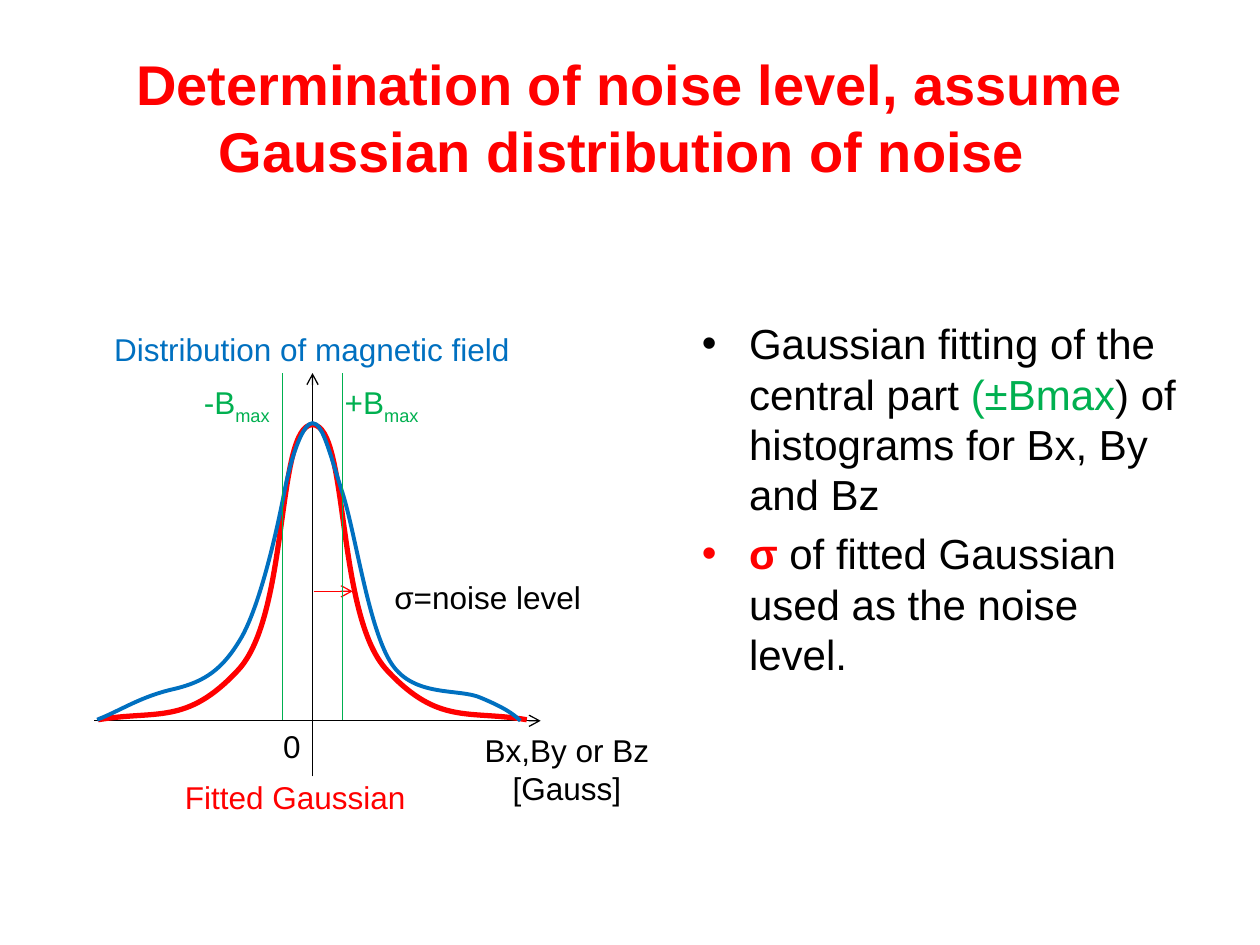
from lxml import etree
from pptx import Presentation
from pptx import util as u
from pptx.dml.color import RGBColor
from pptx.enum import shapes, text
from pptx.oxml import ns

BLACK, RED, BLUE, GREEN = "000000", "FF0000", "0070C0", "00B050"
CENTER = text.PP_ALIGN.CENTER


def color(hex_code):
    return RGBColor.from_string(hex_code)


def add_xml(parent, tag, **attrs):
    return etree.SubElement(parent, ns.qn(tag), attrs)


class SlideBuilder:
    """Places elements on one slide; all positions are in centimetres."""
    font = "Arial"
    thin = 0.75

    def __init__(self, s):
        self.s = s

    def text(self, box, paragraphs, size=18, align=None, wrap=False, anchor=None):
        """Each paragraph is a list of (text, colour, font options) runs."""
        sp = self.s.shapes.add_textbox(*map(u.Cm, box))
        tf = sp.text_frame
        tf.word_wrap = wrap
        tf.vertical_anchor = anchor
        for i, runs in enumerate(paragraphs):
            p = tf.add_paragraph() if i else tf.paragraphs[0]
            p.alignment = align
            p.font.name, p.font.size = self.font, u.Pt(size)
            for words, hex_code, *options in runs:
                r = p.add_run()
                r.text = words
                r.font.name, r.font.size = self.font, u.Pt(size)
                r.font.color.rgb = color(hex_code)
                if "bold" in options:
                    r.font.bold = True
                if "sub" in options:
                    r.font._element.set("baseline", "-25000")
        return tf

    def bullets(self, box, paragraphs, size):
        tf = self.text(box, paragraphs, size, wrap=True)
        for p in tf.paragraphs:
            p.space_before = u.Pt(size * 0.2)
            pPr = p._p.get_or_add_pPr()
            indent = u.Cm(0.95)
            pPr.set("marL", str(indent))
            pPr.set("indent", str(-indent))
            bullet_font = etree.Element(ns.qn("a:buFont"), typeface=self.font)
            bullet = etree.Element(ns.qn("a:buChar"), char="•")
            pPr.find(ns.qn("a:spcBef")).addnext(bullet_font)
            bullet_font.addnext(bullet)

    def line(self, x1, y1, x2, y2, hex_code, arrow=False):
        c = self.s.shapes.add_connector(shapes.MSO_CONNECTOR.STRAIGHT,
                                        *map(u.Cm, (x1, y1, x2, y2)))
        c.line.color.rgb = color(hex_code)
        c.line.width = u.Pt(self.thin)
        if arrow:
            add_xml(c.line._get_or_add_ln(), "a:tailEnd", type="arrow")
        add_xml(c._element.spPr, "a:effectLst")

    def curve(self, points, hex_code, width):
        """Joined cubic curves: a start, then two controls and an end for each."""
        points = [(u.Cm(x), u.Cm(y)) for x, y in points]
        start, *ends = points[::3]
        builder = self.s.shapes.build_freeform(*start)
        builder.add_line_segments(ends, close=False)
        sp = builder.convert_to_shape()
        # Turn each straight segment into a cubic curve
        segments = list(sp._element.iter(ns.qn("a:lnTo")))
        for i, segment in enumerate(segments):
            cubic = etree.Element(ns.qn("a:cubicBezTo"))
            for x, y in points[3 * i + 1:3 * i + 4]:
                add_xml(cubic, "a:pt", x=str(x - sp.left), y=str(y - sp.top))
            segment.getparent().replace(segment, cubic)
        sp.shadow.inherit = False
        sp.fill.background()
        sp.line.color.rgb = color(hex_code)
        sp.line.width = u.Pt(width)


def main():
    prs = Presentation()
    prs.slide_width, prs.slide_height = u.Cm(25.4), u.Cm(19.05)
    b = SlideBuilder(prs.slides.add_slide(prs.slide_layouts[6]))

    # Title and explanation
    b.text((1.27, 0.76, 22.86, 3.18),
           [[("Determination of noise level, assume Gaussian distribution of noise ", RED, "bold")]],
           size=32, align=CENTER, wrap=True, anchor=text.MSO_ANCHOR.MIDDLE)
    b.bullets((13.9, 6.28, 10.24, 12.57), [
        [("Gaussian fitting of the central part ", BLACK), ("(±Bmax", GREEN),
         (") of histograms for Bx, By and Bz", BLACK)],
        [("σ ", RED, "bold"), ("of fitted Gaussian used as the noise level.", BLACK)],
    ], size=24)

    # Horizontal axis
    center, top, base = 6.3, 7.52, 14.53
    b.line(1.9, base, 10.9, base, BLACK, arrow=True)
    b.text((9.5, 14.61, 3.86, 1.8), [[("Bx,By or Bz", BLACK)], [("[Gauss]", BLACK)]],
           align=CENTER)

    # Vertical axis
    b.line(center, 15.65, center, top, BLACK, arrow=True)
    for words, hex_code, x, y, width in (
            ("Distribution of magnetic field", BLUE, 2.05, 6.53, 8.74),
            ("0", BLACK, 5.46, 14.53, 0.86)):
        b.text((x, y, width, 1.02), [[(words, hex_code)]])

    # Fitted Gaussian: left half and its mirror
    left = [(1.98, 14.51), (3.15, 14.31), (3.76, 14.63), (4.8, 13.51),
            (5.84, 12.4), (5.56, 8.59), (center, 8.56)]
    for half in (left, [(2 * center - x, y) for x, y in left]):
        b.curve(half, RED, 3)

    # Measured distribution
    b.curve([(1.96, 14.51), (2.46, 14.31), (2.84, 14.04), (3.51, 13.89),
             (4.14, 13.74), (4.5, 13.49), (4.88, 12.83),
             (5.26, 12.14), (5.59, 10.67), (5.74, 9.88),
             (5.89, 9.12), (6.12, 8.53), (center, 8.53),
             (6.5, 8.53), (6.63, 9.07), (6.88, 9.86),
             (7.16, 10.67), (7.42, 12.67), (7.9, 13.39),
             (8.36, 14.07), (9.27, 13.87), (9.7, 14.07),
             (10.13, 14.25), (10.34, 14.38), (10.49, base)], BLUE, 2.25)

    # Noise level
    b.line(6.32, 11.92, 7.11, 11.92, RED, arrow=True)
    b.text((7.7, 11.53, 4.5, 1.02), [[("σ=noise level", BLACK)]])
    b.text((3.48, 15.56, 5, 1.02), [[("Fitted Gaussian", RED)]])

    # Limits of the central part
    for offset in (-0.61, 0.61):
        b.line(center + offset, 14.51, center + offset, top, GREEN)
    for sign, x, width in (("+", 6.7, 2.11), ("-", 3.86, 1.96)):
        b.text((x, 7.59, width, 1.02), [[(sign + "B", GREEN), ("max", GREEN, "sub")]])

    prs.save("out.pptx")


if __name__ == "__main__":
    main()
